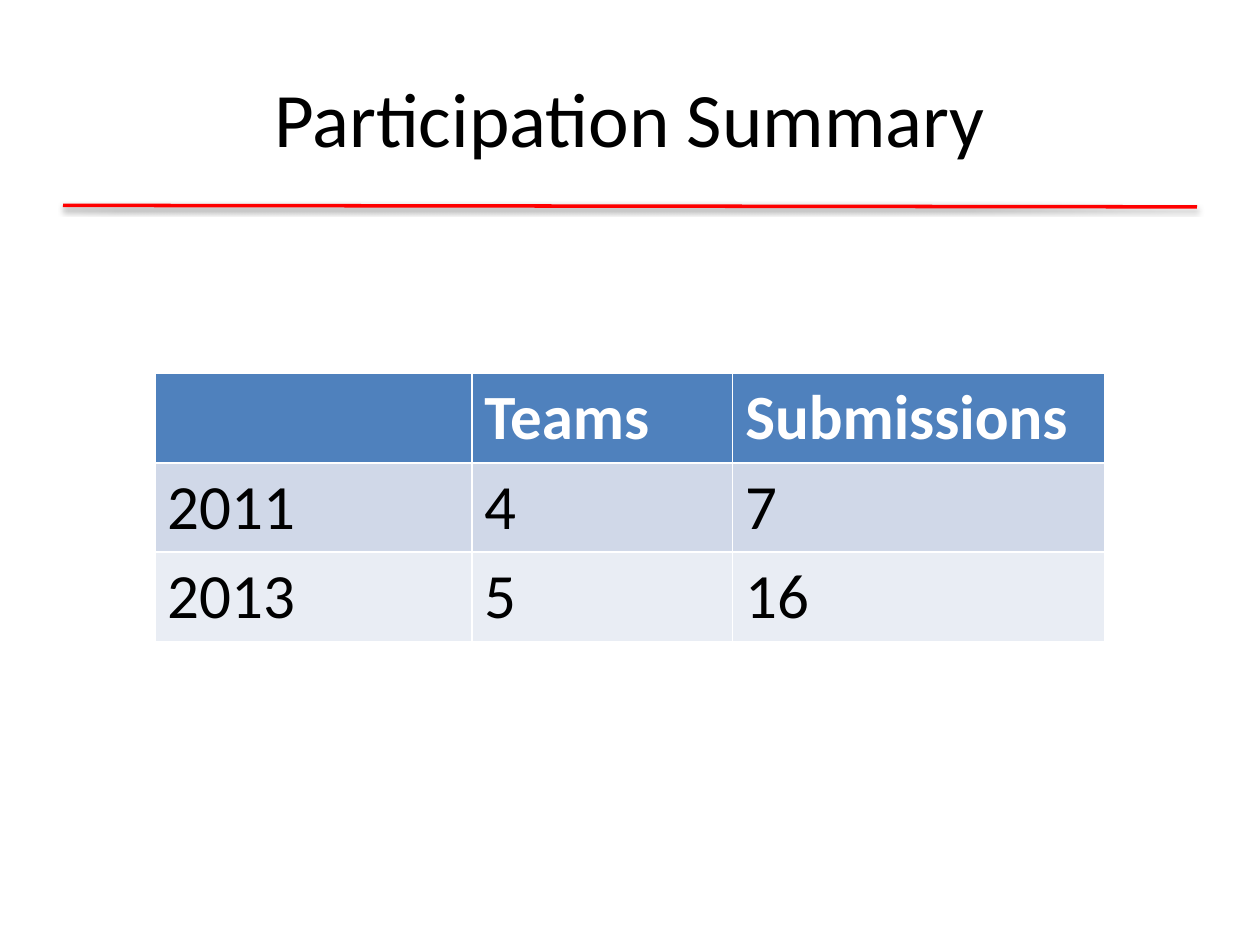
from lxml import etree
from pptx import Presentation, util as u
from pptx.dml.color import RGBColor
from pptx.enum import shapes, text
from pptx.oxml import ns

TITLE = "Participation Summary"
ROWS = [
    ("", "Teams", "Submissions"),
    ("2011", "4", "7"),
    ("2013", "5", "16"),
]
ROW_FILLS = ["4F81BD", "D0D8E8", "E9EDF4"]
COLUMN_WIDTHS = [6.38, 5.26, 7.5]
ROW_HEIGHT = 1.8
TABLE_LEFT, TABLE_TOP = 3.13, 7.53


def color(value):
    return RGBColor.from_string(value)


def write(frame, words, size, fill="000000", bold=False, align=text.PP_ALIGN.LEFT):
    para = frame.paragraphs[0]
    para.alignment = align
    span = para.add_run()
    span.text = words
    span.font.name = "Calibri"
    span.font.size = u.Pt(size)
    span.font.bold = bold
    span.font.color.rgb = color(fill)


def add_soft_shadow(line):
    """Give the line a grey shadow that falls straight down."""
    effects = etree.SubElement(line._element.spPr, ns.qn("a:effectLst"))
    shadow = etree.SubElement(effects, ns.qn("a:outerShdw"), blurRad=str(u.Pt(3.1)),
                              dist=str(u.Pt(1.6)), dir="5400000", rotWithShape="0")
    black = etree.SubElement(shadow, ns.qn("a:srgbClr"), val="000000")
    etree.SubElement(black, ns.qn("a:alpha"), val="38000")


def add_rule(slide):
    rule = slide.shapes.add_connector(shapes.MSO_CONNECTOR.STRAIGHT,
                                      u.Cm(1.27), u.Cm(4.14), u.Cm(24.13), u.Cm(4.17))
    rule.line.color.rgb = color("FF0000")
    rule.line.width = u.Pt(2)
    add_soft_shadow(rule)


def add_title(slide):
    box = slide.shapes.add_textbox(u.Cm(1.27), u.Cm(0.76), u.Cm(22.86), u.Cm(3.18))
    box.text_frame.word_wrap = True
    box.text_frame.vertical_anchor = text.MSO_ANCHOR.MIDDLE
    write(box.text_frame, TITLE, 44, align=text.PP_ALIGN.CENTER)


def add_summary_table(slide):
    """The default table style supplies the white rules between cells."""
    table = slide.shapes.add_table(
        len(ROWS), len(COLUMN_WIDTHS), u.Cm(TABLE_LEFT), u.Cm(TABLE_TOP),
        u.Cm(sum(COLUMN_WIDTHS)), u.Cm(ROW_HEIGHT * len(ROWS))).table
    for column, width in zip(table.columns, COLUMN_WIDTHS):
        column.width = u.Cm(width)
    for i, (values, fill) in enumerate(zip(ROWS, ROW_FILLS)):
        header = i == 0
        for j, value in enumerate(values):
            cell = table.cell(i, j)
            cell.fill.solid()
            cell.fill.fore_color.rgb = color(fill)
            if value:
                write(cell.text_frame, value, 36,
                      fill="FFFFFF" if header else "000000", bold=header)


def main():
    deck = Presentation()
    deck.slide_width, deck.slide_height = u.Cm(25.4), u.Cm(19.05)
    slide = deck.slides.add_slide(deck.slide_layouts[6])
    add_rule(slide)
    add_title(slide)
    add_summary_table(slide)
    deck.save("out.pptx")


if __name__ == "__main__":
    main()
